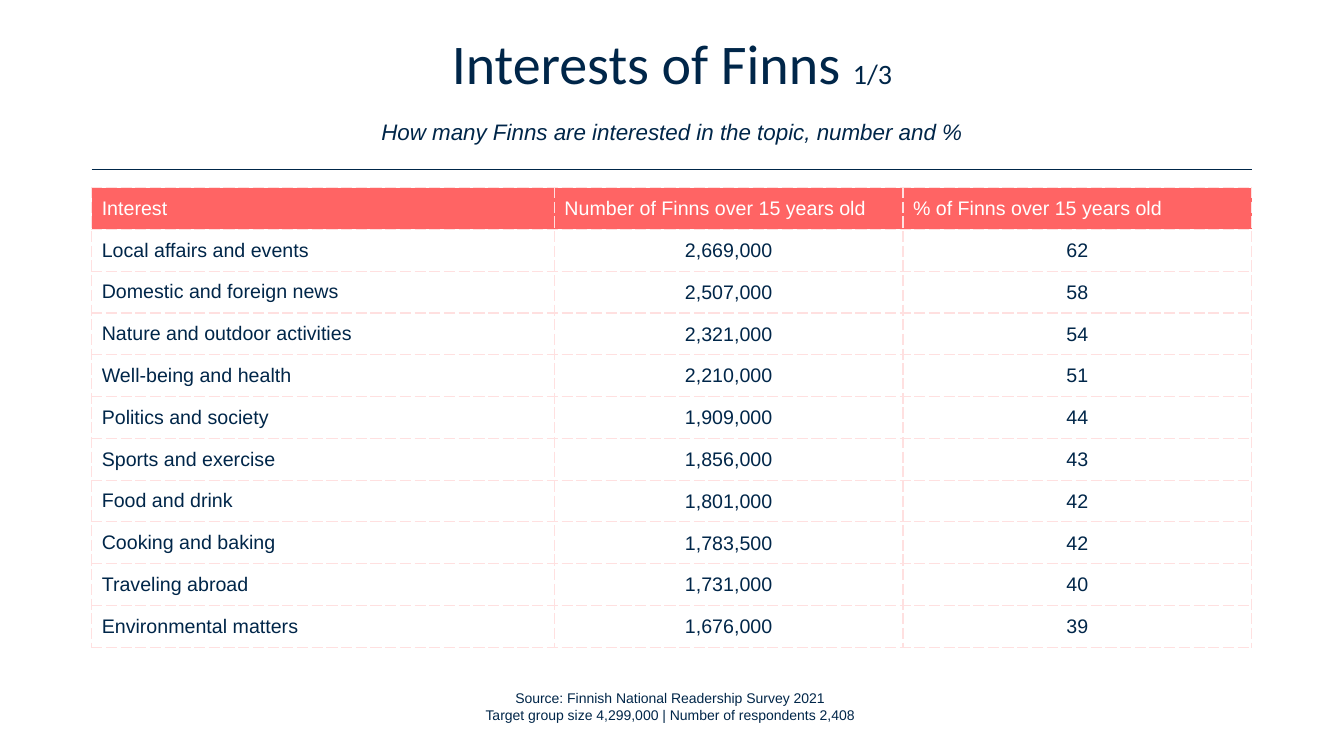
from lxml import etree
from pptx import Presentation
from pptx.dml.color import RGBColor
from pptx.enum import shapes, text
from pptx.oxml import ns
from pptx.util import Pt

NAVY, CORAL, PINK, WHITE = "002649", "FF6464", "FFE0E0", "FFFFFF"
LEFT, WIDTH = 65.5, 828.5

HEADINGS = ("Interest", "Number of Finns over 15 years old", "% of Finns over 15 years old")
INTERESTS = [
    ("Local affairs and events", "2,669,000", "62"),
    ("Domestic and foreign news", "2,507,000", "58"),
    ("Nature and outdoor activities", "2,321,000", "54"),
    ("Well-being and health", "2,210,000", "51"),
    ("Politics and society", "1,909,000", "44"),
    ("Sports and exercise", "1,856,000", "43"),
    ("Food and drink", "1,801,000", "42"),
    ("Cooking and baking", "1,783,500", "42"),
    ("Traveling abroad", "1,731,000", "40"),
    ("Environmental matters", "1,676,000", "39"),
]


def rgb(value):
    return RGBColor.from_string(value)


def write(paragraph, words, size=14, font="Arial", color=NAVY, italic=False, align=None):
    """Append formatted words to a paragraph; a newline becomes a line break."""
    if align is not None:
        paragraph.alignment = align
    for number, line in enumerate(words.split("\n")):
        if number:
            paragraph.add_line_break()
        if line:
            run = paragraph.add_run()
            run.text = line
            run.font.size = Pt(size)
            run.font.name = font
            run.font.bold = False
            run.font.italic = italic
            run.font.color.rgb = rgb(color)


def dash_borders(cell, color=PINK, width=1):
    properties = cell._tc.get_or_add_tcPr()
    for side in ("lnL", "lnR", "lnT", "lnB"):
        border = etree.SubElement(properties, ns.qn(f"a:{side}"), w=str(Pt(width)))
        fill = etree.SubElement(border, ns.qn("a:solidFill"))
        etree.SubElement(fill, ns.qn("a:srgbClr"), val=color)
        etree.SubElement(border, ns.qn("a:prstDash"), val="sysDash")


class SurveySlide:
    def __init__(self, deck):
        self.slide = deck.slides.add_slide(deck.slide_layouts[5])
        self.center = text.PP_ALIGN.CENTER

    def title(self, heading, page, subtitle, left, top, width, height):
        holder = self.slide.shapes.title
        holder.left, holder.top = Pt(left), Pt(top)
        holder.width, holder.height = Pt(width), Pt(height)
        holder.text_frame.vertical_anchor = text.MSO_ANCHOR.MIDDLE
        paragraph = holder.text_frame.paragraphs[0]
        paragraph.line_spacing = Pt(35)
        paragraph.space_after = Pt(18)
        write(paragraph, heading + " ", size=40, font="Calibri", align=self.center)
        write(paragraph, page + "\n", size=20, font="Calibri")
        write(paragraph, subtitle, size=16, italic=True)

    def rule(self, left, top, width):
        line = self.slide.shapes.add_connector(
            shapes.MSO_CONNECTOR.STRAIGHT, Pt(left), Pt(top), Pt(left + width), Pt(top))
        line.line.color.rgb = rgb(NAVY)
        line.line.width = Pt(1)
        etree.SubElement(line._element.spPr, ns.qn("a:effectLst"))

    def table(self, rows, left, top, column_widths, row_height):
        frame = self.slide.shapes.add_table(
            len(rows), len(column_widths), Pt(left), Pt(top),
            Pt(sum(column_widths)), Pt(row_height * len(rows)))
        grid = frame.table
        grid.horz_banding = False
        for column, width in zip(grid.columns, column_widths):
            column.width = Pt(width)
        for r, values in enumerate(rows):
            grid.rows[r].height = Pt(row_height)
            for c, value in enumerate(values):
                self.cell(grid.cell(r, c), value, header=r == 0, figure=r > 0 and c > 0)

    def cell(self, cell, value, header, figure):
        dash_borders(cell)
        cell.vertical_anchor = text.MSO_ANCHOR.MIDDLE
        if header:
            cell.fill.solid()
            cell.fill.fore_color.rgb = rgb(CORAL)
        else:
            cell.fill.background()
        if figure:
            cell.margin_left = cell.margin_right = cell.margin_top = Pt(0.75)
            cell.margin_bottom = Pt(0)
        write(cell.text_frame.paragraphs[0], value, color=WHITE if header else NAVY,
              align=self.center if figure else None)

    def source(self, words, left, top, width, height):
        box = self.slide.shapes.add_textbox(Pt(left), Pt(top), Pt(width), Pt(height))
        box.text_frame.word_wrap = True
        write(box.text_frame.paragraphs[0], words, size=10, align=self.center)


def main():
    deck = Presentation()
    deck.slide_width, deck.slide_height = Pt(960), Pt(540)
    survey = SurveySlide(deck)
    survey.title("Interests of Finns", "1/3",
                 "How many Finns are interested in the topic, number and %",
                 66, 30, 828, 77)
    survey.source("Source: Finnish National Readership Survey 2021\n"
                  "Target group size 4,299,000 | Number of respondents 2,408",
                  292, 489, 373, 31.5)
    survey.rule(LEFT, 121, WIDTH)
    survey.table([HEADINGS, *INTERESTS], LEFT, 134, (330.5, 249, 249), 29.85)
    deck.save("out.pptx")


if __name__ == "__main__":
    main()
